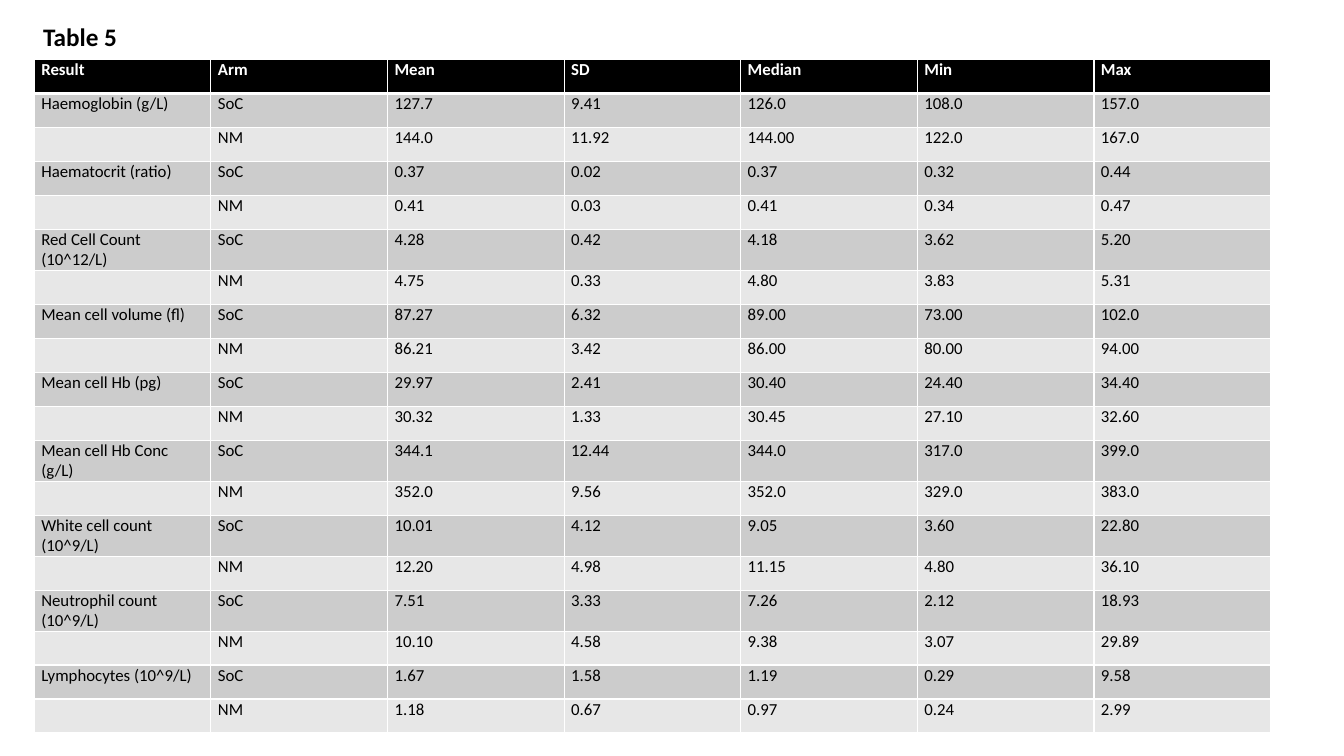
import lxml.etree
import pptx
import pptx.dml.color
import pptx.oxml.ns
import pptx.util

COLORS = {"head": "000000", "dark": "CCCCCC", "light": "E7E7E7",
          "text": "000000", "white": "FFFFFF"}
FONT = "Calibri"
WIDE, HIGH = 13.33, 7.5

HEADS = ["Result", "Arm", "Mean", "SD", "Median", "Min", "Max"]
# Each result holds its SoC values, then its NM values
RESULTS = [
    ("Haemoglobin (g/L)", "127.7 9.41 126.0 108.0 157.0", "144.0 11.92 144.00 122.0 167.0"),
    ("Haematocrit (ratio)", "0.37 0.02 0.37 0.32 0.44", "0.41 0.03 0.41 0.34 0.47"),
    ("Red Cell Count (10^12/L)", "4.28 0.42 4.18 3.62 5.20", "4.75 0.33 4.80 3.83 5.31"),
    ("Mean cell volume (fl)", "87.27 6.32 89.00 73.00 102.0", "86.21 3.42 86.00 80.00 94.00"),
    ("Mean cell Hb (pg)", "29.97 2.41 30.40 24.40 34.40", "30.32 1.33 30.45 27.10 32.60"),
    ("Mean cell Hb Conc (g/L)", "344.1 12.44 344.0 317.0 399.0", "352.0 9.56 352.0 329.0 383.0"),
    ("White cell count (10^9/L)", "10.01 4.12 9.05 3.60 22.80", "12.20 4.98 11.15 4.80 36.10"),
    ("Neutrophil count (10^9/L)", "7.51 3.33 7.26 2.12 18.93", "10.10 4.58 9.38 3.07 29.89"),
    ("Lymphocytes (10^9/L)", "1.67 1.58 1.19 0.29 9.58", "1.18 0.67 0.97 0.24 2.99"),
]


def color(name):
    return pptx.dml.color.RGBColor.from_string(COLORS[name])


def style(frame, size, name, bold):
    for run in frame.paragraphs[0].runs:
        run.font.name = FONT
        run.font.size = pptx.util.Pt(size)
        run.font.bold = bold
        run.font.color.rgb = color(name)


def edge(cell, side, width):
    qn = pptx.oxml.ns.qn
    props = cell._tc.get_or_add_tcPr()
    line = lxml.etree.SubElement(props, qn("a:ln" + side), w=str(pptx.util.Pt(width)))
    fill = lxml.etree.SubElement(line, qn("a:solidFill"))
    lxml.etree.SubElement(fill, qn("a:srgbClr"), val=COLORS["white"])


def draw_title(slide, box):
    shape = slide.shapes.add_textbox(*map(pptx.util.Inches, box))
    frame = shape.text_frame
    frame.word_wrap = False
    frame.auto_size = pptx.enum.text.MSO_AUTO_SIZE.SHAPE_TO_FIT_TEXT
    frame.text = "Table 5"
    style(frame, 18, "text", True)


def draw_cell(cell, text, fill, head):
    cell.margin_left = cell.margin_right = pptx.util.Inches(0.07)
    cell.margin_top = cell.margin_bottom = 0
    # Borders come before the fill; the header has a thick rule below
    for side in ("L", "R", "T", "B") if head else ("L", "R", "B"):
        edge(cell, side, 3 if head and side == "B" else 1)
    cell.fill.solid()
    cell.fill.fore_color.rgb = color(fill)
    cell.text_frame.text = text
    style(cell.text_frame, 12, "white" if head else "text", head)


def draw_table(slide, box):
    rows = [HEADS]
    for name, soc, nm in RESULTS:
        rows.append([name, "SoC"] + soc.split())
        rows.append(["", "NM"] + nm.split())
    table = slide.shapes.add_table(
        len(rows), len(HEADS), *map(pptx.util.Inches, box)).table
    for r, row in enumerate(rows):
        fill = "head" if r == 0 else "dark" if r % 2 else "light"
        for c, text in enumerate(row):
            draw_cell(table.cell(r, c), text, fill, r == 0)


def main():
    deck = pptx.Presentation()
    deck.slide_width = pptx.util.Inches(WIDE)
    deck.slide_height = pptx.util.Inches(HIGH)
    slide = deck.slides.add_slide(deck.slide_layouts[6])
    # Rows start equal; two-line names make theirs taller
    draw_table(slide, (0.34, 0.59, WIDE * 0.92, 6.41))
    draw_title(slide, (0.33, 0.16, 0.94, 0.4))
    deck.save("out.pptx")


if __name__ == "__main__":
    import pptx.enum.text
    main()
